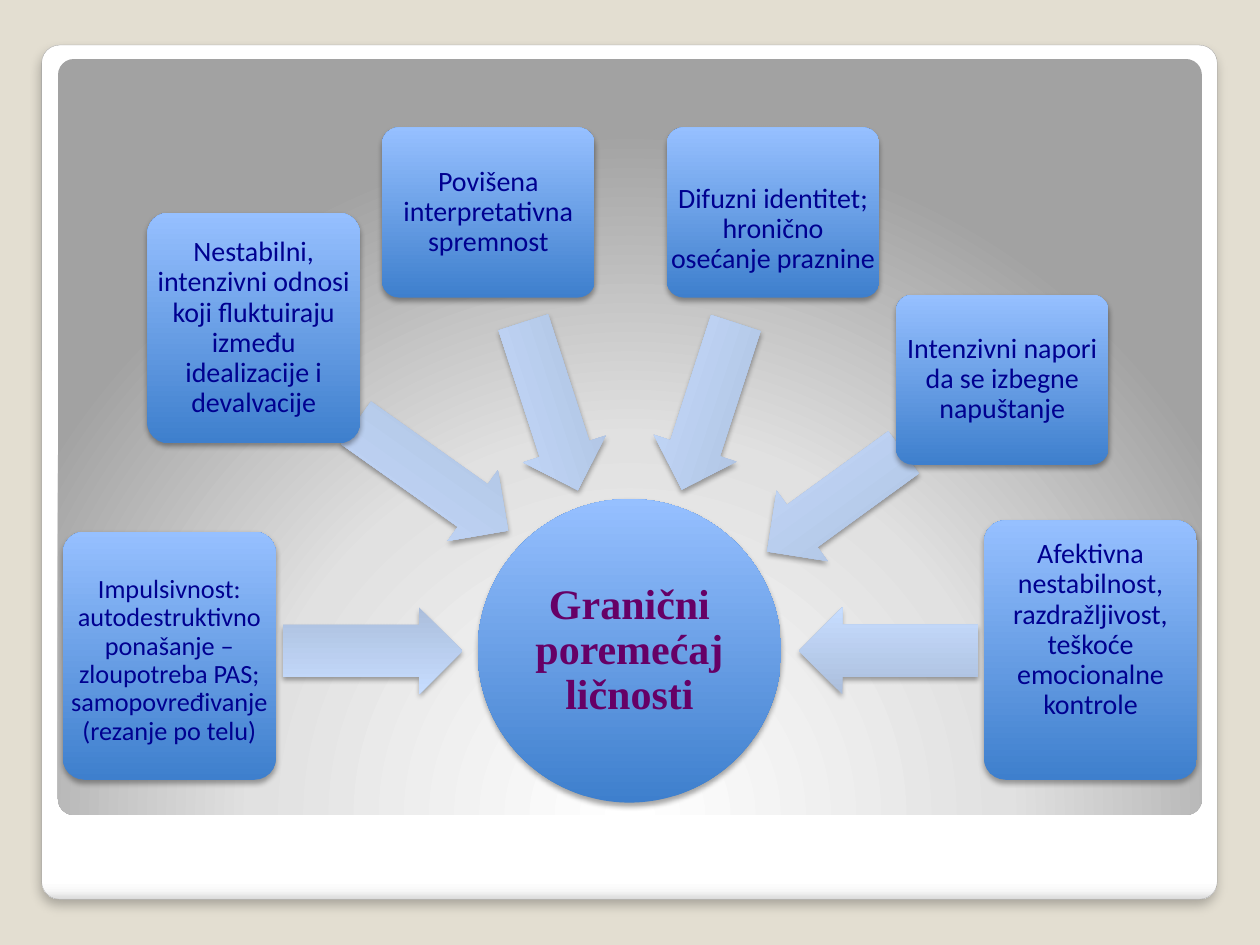
from lxml import etree
from pptx import Presentation
from pptx import util as u
from pptx.dml.color import RGBColor
from pptx.enum import shapes, text
from pptx.oxml import ns

COLORS = {
    "background": "E3DED1", "frame_line": "A4A4A4", "shadow": "000000",
    "title": "660066", "card_text": "000090",
}
GRADIENTS = {
    "frame": [(0, "FFFFFF"), (98, "FFFFFF"), (99, "F7F7F7"), (100, "DADADA")],
    "panel": [(0, "FFFFFF"), (55, "E1E1E1"), (100, "A2A2A2")],
    "blue": [(0, "3E7FCD"), (100, "96C0FF")],
    "arrow": [(0, "ABBEDC"), (100, "C7DDFF")],
}
FRAME = (0.84, 0.91, 23.7, 17.22)
PANEL = (1.17, 1.19, 23.06, 15.24)
CIRCLE = (9.63, 10.06, 6.12, 6.12)
CARD_WIDTH = 4.29
ARROW_HEIGHT = 1.75

# Each symptom: card left, top, height; text shift and size; arrow centre, length, rotation.
SYMPTOMS = [
    ("Impulsivnost:\nautodestruktivno ponašanje –zloupotreba PAS;\vsamopovređivanje (rezanje po telu)",
     (1.27, 10.72, 5.0), 0.1, 15, (7.51, 13.12, 3.63, 180)),
    ("Nestabilni, intenzivni odnosi koji fluktuiraju između idealizacije i devalvacije",
     (2.97, 4.29, 4.65), 0, 16, (8.71, 9.61, 3.76, 215.3)),
    ("Povišena interpretativna spremnost",
     (7.7, 2.57, 3.43), 0, 16, (11.1, 8.19, 3.56, 252)),
    ("Difuzni identitet; hronično osećanje praznine",
     (13.44, 2.57, 3.43), 0.34, 16, (14.29, 8.19, 3.53, 288)),
    ("Intenzivni napori da se izbegne napuštanje",
     (18.06, 5.94, 3.43), 0, 16, (16.84, 10.12, 3.4, 324)),
    ("Afektivna nestabilnost, razdražljivost, teškoće emocionalne kontrole",
     (19.84, 10.49, 5.23), -0.4, 16, (17.91, 13.12, 3.61, 0)),
]


def add_child(parent, tag, **attributes):
    """Append a DrawingML element and return it."""
    child = etree.SubElement(parent, ns.qn(tag))
    for name, value in attributes.items():
        child.set(name, str(value))
    return child


def add_form(slide, kind, box, gradient, angle=None, adjustments=(), shadow=None):
    """Draw a preset shape with a linear gradient, or a radial one if no angle is given."""
    shape = slide.shapes.add_shape(kind, *map(u.Cm, box))
    for index, value in enumerate(adjustments):
        shape.adjustments[index] = value
    properties = shape._element.spPr
    fill = add_child(properties, "a:gradFill", rotWithShape=1)
    stops = add_child(fill, "a:gsLst")
    for position, color in GRADIENTS[gradient]:
        stop = add_child(stops, "a:gs", pos=position * 1000)
        add_child(stop, "a:srgbClr", val=color)
    if angle is None:
        route = add_child(fill, "a:path", path="circle")
        add_child(route, "a:fillToRect", l=50000, t=175000, r=50000, b=-75000)
    else:
        add_child(fill, "a:lin", ang=angle * 60000, scaled=0)
    shape.line.fill.background()
    shape.shadow.inherit = False
    if shadow:
        alpha, blur, distance = shadow
        outer = add_child(properties.find(ns.qn("a:effectLst")), "a:outerShdw",
                          blurRad=u.Pt(blur), dist=u.Pt(distance), dir=5400000,
                          algn="ctr", rotWithShape=0)
        color = add_child(outer, "a:srgbClr", val=COLORS["shadow"])
        add_child(color, "a:alpha", val=alpha * 1000)
    return shape


def set_words(shape, words, font_name, size, color, inset, bold=False):
    """Put centred, wrapped text in a shape."""
    frame = shape.text_frame
    frame.text = words
    frame.word_wrap = True
    frame.auto_size = text.MSO_AUTO_SIZE.NONE
    frame.vertical_anchor = text.MSO_ANCHOR.MIDDLE
    frame.margin_left = frame.margin_right = u.Cm(inset)
    frame.margin_top = frame.margin_bottom = u.Cm(inset)
    for paragraph in frame.paragraphs:
        paragraph.alignment = text.PP_ALIGN.CENTER
        paragraph.line_spacing = 0.9
        for run in paragraph.runs:
            run.font.name = font_name
            run.font.size = u.Pt(size)
            run.font.bold = bold
            run.font.color.rgb = RGBColor.from_string(COLORS[color])


def add_backdrop(slide, frame_box, panel_box):
    """Draw the white frame and the grey panel inside it."""
    rounded = shapes.MSO_SHAPE.ROUNDED_RECTANGLE
    frame = add_form(slide, rounded, frame_box, "frame", 90, [0.021], (25, 6, 4))
    frame.line.color.rgb = RGBColor.from_string(COLORS["frame_line"])
    frame.line.width = u.Pt(0.16)
    add_form(slide, rounded, panel_box, "panel", adjustments=[0.021])


def add_hub(slide, box):
    """Draw the central circle and set the title over it."""
    add_form(slide, shapes.MSO_SHAPE.OVAL, box, "blue", 270, shadow=(35, 3.1, 1.8))
    title = slide.shapes.title
    title.left, title.top, title.width, title.height = map(u.Cm, box)
    set_words(title, "Granični poremećaj ličnosti", "Times New Roman", 24, "title", 0.05, True)
    slide.shapes._spTree.append(title._element)


def add_arrow(slide, center_x, center_y, length, rotation):
    """Draw a block arrow turned about its centre."""
    box = (center_x - length / 2, center_y - ARROW_HEIGHT / 2, length, ARROW_HEIGHT)
    arrow = add_form(slide, shapes.MSO_SHAPE.LEFT_ARROW, box, "arrow", 270,
                     [0.6, 0.5], (35, 3.1, 1.8))
    arrow.rotation = rotation


def add_card(slide, box, words, shift, size):
    """Draw a rounded card and its text, moved down by the shift."""
    add_form(slide, shapes.MSO_SHAPE.ROUNDED_RECTANGLE, box, "blue", 270,
             [0.1], (35, 3.1, 1.8))
    left, top, width, height = box
    label = slide.shapes.add_textbox(*map(u.Cm, (left, top + shift, width, height)))
    set_words(label, words, "Calibri", size, "card_text", 0.08)


def main():
    """Build the slide and save it."""
    presentation = Presentation()
    presentation.slide_width, presentation.slide_height = u.Cm(25.4), u.Cm(19.05)
    slide = presentation.slides.add_slide(presentation.slide_layouts.get_by_name("Title Only"))
    slide.background.fill.solid()
    slide.background.fill.fore_color.rgb = RGBColor.from_string(COLORS["background"])
    add_backdrop(slide, FRAME, PANEL)
    add_hub(slide, CIRCLE)
    for words, (left, top, height), shift, size, arrow in SYMPTOMS:
        add_arrow(slide, *arrow)
        add_card(slide, (left, top, CARD_WIDTH, height), words, shift, size)
    presentation.save("out.pptx")


if __name__ == "__main__":
    main()
